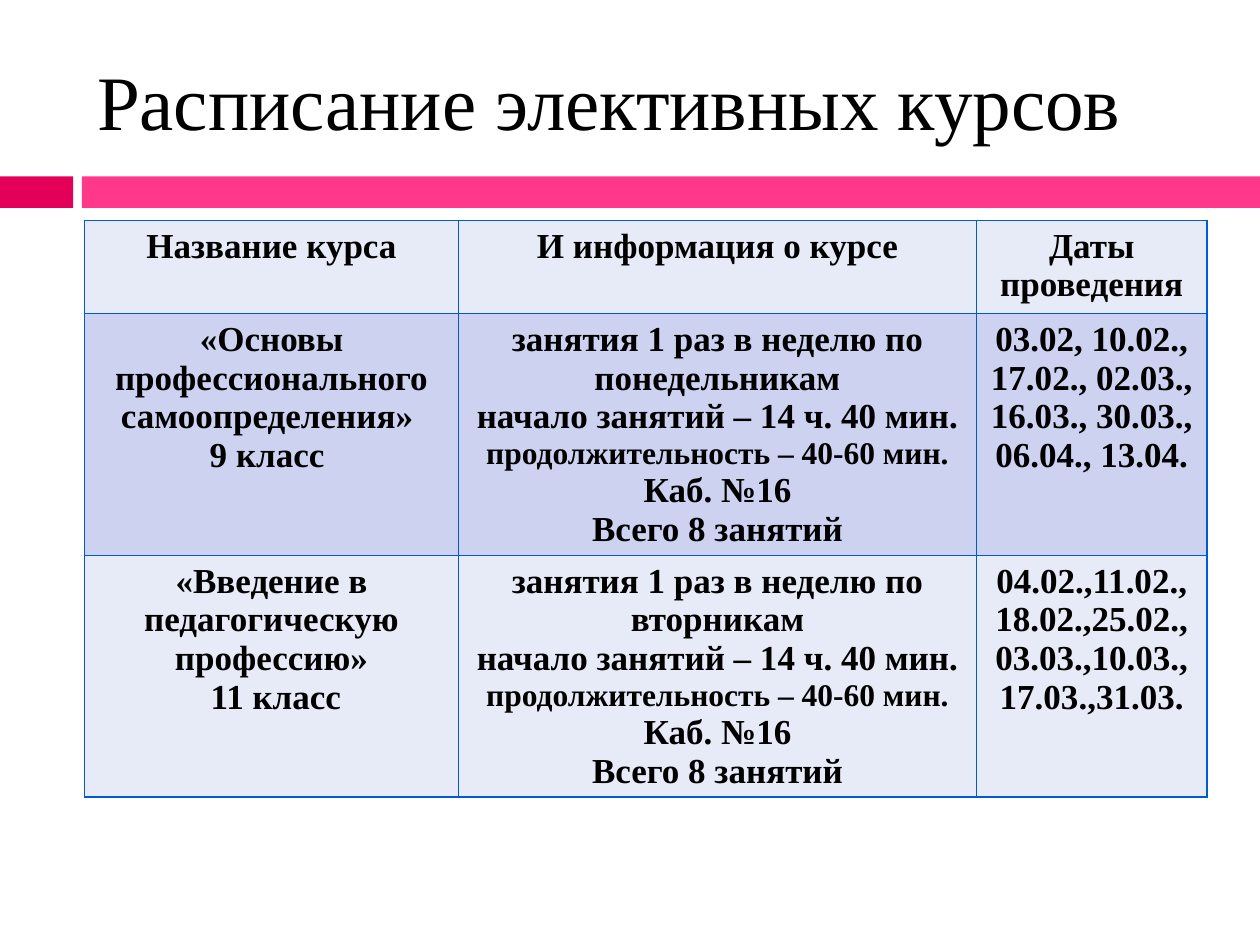
from lxml import etree
from pptx import Presentation
from pptx import util as u
from pptx.dml import color
from pptx.enum import shapes, text
from pptx.oxml import ns

BLACK, BORDER, PALE, LILAC = "000000", "005BD3", "E7EAF7", "CCD2EF"
ROSE, PINK = "E40059", "FF388C"


def rgb(value):
    """Turn a hex string into a colour."""
    return color.RGBColor.from_string(value)


def course_info(weekday):
    """Return the information lines of a course held on the given weekday."""
    return [
        f"занятия 1 раз в неделю по {weekday}",
        "начало занятий – 14 ч. 40 мин.",
        ("продолжительность – 40-60 мин.", 18),
        "Каб. №16",
        "Всего 8 занятий",
    ]


class SchedulePage:
    """Hold the text style and the current slide, and add elements to it."""

    font_name = "Times New Roman"

    def __init__(self, deck):
        """Add a title-only slide to the deck."""
        self.page = deck.slides.add_slide(deck.slide_layouts[5])

    def add_span(self, para, words, size, bold, align):
        """Add one styled run to a paragraph."""
        para.alignment = align
        span = para.add_run()
        span.text = words
        style = {"name": self.font_name, "size": u.Pt(size), "bold": bold}
        for key, value in style.items():
            setattr(span.font, key, value)
        span.font.color.rgb = rgb(BLACK)

    def title(self, words, left, top, width, height):
        """Place and fill the title placeholder."""
        box = self.page.shapes.title
        place = {"left": left, "top": top, "width": width, "height": height}
        for key, value in place.items():
            setattr(box, key, u.Inches(value))
        frame = box.text_frame
        frame.vertical_anchor = text.MSO_ANCHOR.MIDDLE
        self.add_span(frame.paragraphs[0], words, 44, False, text.PP_ALIGN.LEFT)

    def bar(self, left, top, width, height, fill):
        """Add a plain coloured bar."""
        box = self.page.shapes.add_shape(
            shapes.MSO_SHAPE.RECTANGLE, *map(u.Inches, (left, top, width, height)))
        box.shadow.inherit = False
        box.fill.solid()
        box.fill.fore_color.rgb = rgb(fill)
        box.line.fill.background()

    def cell(self, cell, lines, fill):
        """Give one table cell its borders, fill and text."""
        properties = cell._tc.get_or_add_tcPr()
        for side in ("a:lnL", "a:lnR", "a:lnT", "a:lnB"):
            edge = etree.SubElement(properties, ns.qn(side), w=str(u.Pt(1)))
            paint = etree.SubElement(edge, ns.qn("a:solidFill"))
            etree.SubElement(paint, ns.qn("a:srgbClr"), val=BORDER)
        cell.fill.solid()
        cell.fill.fore_color.rgb = rgb(fill)
        frame = cell.text_frame
        for index, line in enumerate(lines):
            para = frame.add_paragraph() if index else frame.paragraphs[0]
            words, size = line if isinstance(line, tuple) else (line, 20)
            self.add_span(para, words, size, True, text.PP_ALIGN.CENTER)

    def table(self, rows, left, top, widths, heights):
        """Add a bordered table with alternating row fills."""
        frame = self.page.shapes.add_table(
            len(rows), len(widths), *map(u.Inches, (left, top, sum(widths), sum(heights))))
        grid = frame.table
        for column, width in zip(grid.columns, widths):
            column.width = u.Inches(width)
        for index, (row, height) in enumerate(zip(rows, heights)):
            grid.rows[index].height = u.Inches(height)
            for cell, lines in zip(grid.rows[index].cells, row):
                self.cell(cell, lines, LILAC if index % 2 else PALE)


def main():
    """Build the timetable slide and save it."""
    deck = Presentation()
    deck.slide_width, deck.slide_height = u.Inches(10), u.Inches(7.5)
    schedule = SchedulePage(deck)
    schedule.bar(0, 1.4, 0.58, 0.25, ROSE)
    schedule.bar(0.65, 1.4, 9.35, 0.25, PINK)
    schedule.title("Расписание элективных курсов", 0.67, 0.25, 8.92, 1.08)
    rows = [
        [["Название курса"], ["И информация о курсе"], ["Даты проведения"]],
        [["«Основы профессионального самоопределения» ", "9 класс "],
         course_info("понедельникам"),
         ["03.02, 10.02., 17.02., 02.03., 16.03., 30.03., 06.04., 13.04."]],
        [["«Введение в педагогическую профессию»", " 11 класс"],
         course_info("вторникам"),
         ["04.02.,11.02.,18.02.,25.02.,03.03.,10.03.,17.03.,31.03."]],
    ]
    schedule.table(rows, 0.67, 1.75, [2.97, 4.11, 1.83], [0.74, 1.53, 1.53])
    deck.save("out.pptx")


if __name__ == "__main__":
    main()
